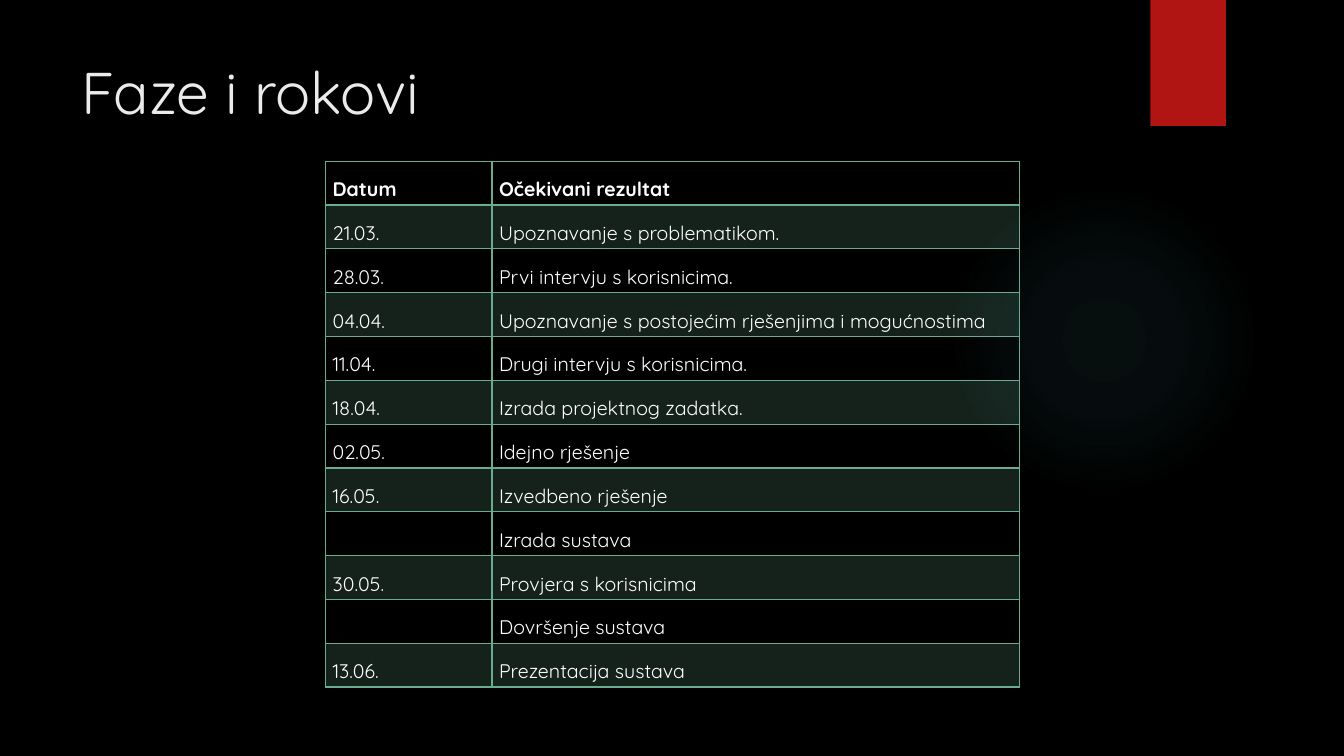
from typing import NamedTuple

from lxml.etree import SubElement
from pptx import Presentation
from pptx.dml.color import RGBColor
from pptx.enum.shapes import MSO_SHAPE
from pptx.enum.text import MSO_ANCHOR, MSO_AUTO_SIZE, PP_ALIGN
from pptx.oxml import parse_xml
from pptx.oxml.ns import nsdecls, qn
from pptx.util import Inches, Pt

COLORS = {
    "background": "000000",
    "glow": "50B9C1",
    "ribbon": "B01513",
    "title": "EBEBEB",
    "text": "FFFFFF",
    "mint": "6AAC90",
}
FONT = "Quicksand"
COLUMN_WIDTHS = (1.65, 5.23)
TABLE_HEIGHT = 5.22
GLOW_STOPS = ((0, 7), (36, 6), (69, 0))


class Phase(NamedTuple):
    """One table row: a deadline and its expected result."""

    date: str
    result: str


PHASES = (
    Phase("Datum", "Očekivani rezultat"),
    Phase("21.03.", "Upoznavanje s problematikom."),
    Phase("28.03.", "Prvi intervju s korisnicima."),
    Phase("04.04.", "Upoznavanje s postojećim rješenjima i mogućnostima"),
    Phase("11.04.", "Drugi intervju s korisnicima."),
    Phase("18.04.", "Izrada projektnog zadatka."),
    Phase("02.05.", "Idejno rješenje"),
    Phase("16.05.", "Izvedbeno rješenje"),
    Phase("", "Izrada sustava"),
    Phase("30.05.", "Provjera s korisnicima"),
    Phase("", "Dovršenje sustava"),
    Phase("13.06.", "Prezentacija sustava"),
)


def color(name: str) -> RGBColor:
    """Look up a named colour."""
    return RGBColor.from_string(COLORS[name])


def add_span(para, text: str, size: float, color_name: str, bold: bool = False) -> None:
    """Add one formatted run to a paragraph."""
    span = para.add_run()
    span.text = text
    span.font.name = FONT
    span.font.size = Pt(size)
    span.font.bold = bold
    span.font.color.rgb = color(color_name)


def add_plain_shape(page, kind, left: float, top: float, width: float, height: float):
    """Add a preset shape without outline or shadow."""
    shape = page.shapes.add_shape(
        kind, Inches(left), Inches(top), Inches(width), Inches(height)
    )
    shape.line.fill.background()
    shape.shadow.inherit = False
    return shape


def add_glow(page) -> None:
    """Draw the soft radial glow behind the table."""
    glow = add_plain_shape(page, MSO_SHAPE.OVAL, 9.41, 1.83, 3.08, 3.08)
    glow.fill.background()
    stops = "".join(
        f'<a:gs pos="{position * 1000}"><a:srgbClr val="{COLORS["glow"]}">'
        f'<a:alpha val="{opacity * 1000}"/></a:srgbClr></a:gs>'
        for position, opacity in GLOW_STOPS
    )
    gradient = parse_xml(
        f'<a:gradFill {nsdecls("a")}><a:gsLst>{stops}</a:gsLst><a:path path="circle">'
        '<a:fillToRect l="50000" t="50000" r="50000" b="50000"/></a:path></a:gradFill>'
    )
    properties = glow.element.spPr
    properties.replace(properties.find(qn("a:noFill")), gradient)


def add_ribbon(page) -> None:
    """Draw the red ribbon at the top edge."""
    ribbon = add_plain_shape(page, MSO_SHAPE.RECTANGLE, 11.41, 0, 0.75, 1.25)
    ribbon.fill.solid()
    ribbon.fill.fore_color.rgb = color("ribbon")


def set_title(page, text: str) -> None:
    """Place and format the title placeholder."""
    title = page.shapes.title
    title.left, title.top = Inches(0.71), Inches(0.5)
    title.width, title.height = Inches(10.29), Inches(1.53)
    frame = title.text_frame
    frame.auto_size = MSO_AUTO_SIZE.NONE
    frame.vertical_anchor = MSO_ANCHOR.TOP
    para = frame.paragraphs[0]
    para.alignment = PP_ALIGN.LEFT
    add_span(para, text, 42, "title")


def set_borders(cell, top: float, bottom: float) -> None:
    """Outline a cell, with its own widths above and below."""
    properties = cell._tc.get_or_add_tcPr()
    for side, width in (("L", 1), ("R", 1), ("T", top), ("B", bottom)):
        line = SubElement(properties, qn(f"a:ln{side}"), w=str(Pt(width)))
        fill = SubElement(line, qn("a:solidFill"))
        SubElement(fill, qn("a:srgbClr"), val=COLORS["mint"])


def fill_cell(cell, banded: bool) -> None:
    """Give a cell a translucent band or no fill."""
    if not banded:
        cell.fill.background()
        return
    cell.fill.solid()
    cell.fill.fore_color.rgb = color("mint")
    tint = cell._tc.tcPr.find(f"{qn('a:solidFill')}/{qn('a:srgbClr')}")
    SubElement(tint, qn("a:alpha"), val="20000")


def format_cell(cell, text: str, row: int) -> None:
    """Write one table cell and style it by its row."""
    cell.margin_left = cell.margin_right = Inches(0.07)
    cell.margin_top = cell.margin_bottom = 0
    cell.vertical_anchor = MSO_ANCHOR.MIDDLE
    set_borders(cell, top=2 if row == 1 else 1, bottom=2 if row == 0 else 1)
    fill_cell(cell, banded=row % 2 == 1)
    if text:
        para = cell.text_frame.paragraphs[0]
        para.line_spacing = 1.5
        add_span(para, text, 14, "text", bold=row == 0)


def add_schedule(page) -> None:
    """Draw the table of phases and deadlines."""
    table = page.shapes.add_table(
        len(PHASES), len(COLUMN_WIDTHS), Inches(3.23), Inches(1.6),
        Inches(sum(COLUMN_WIDTHS)), Inches(TABLE_HEIGHT),
    ).table
    table.first_row = table.horz_banding = False
    for column, width in zip(table.columns, COLUMN_WIDTHS):
        column.width = Inches(width)
    for row, phase in enumerate(PHASES):
        table.rows[row].height = Inches(TABLE_HEIGHT / len(PHASES))
        for column, text in enumerate(phase):
            format_cell(table.cell(row, column), text, row)


def main() -> None:
    """Build the slide and save it."""
    deck = Presentation()
    deck.slide_width, deck.slide_height = Inches(13.33), Inches(7.5)
    page = deck.slides.add_slide(deck.slide_layouts.get_by_name("Title Only"))
    page.background.fill.solid()
    page.background.fill.fore_color.rgb = color("background")
    add_glow(page)
    add_ribbon(page)
    set_title(page, "Faze i rokovi")
    add_schedule(page)
    deck.save("out.pptx")


if __name__ == "__main__":
    main()
